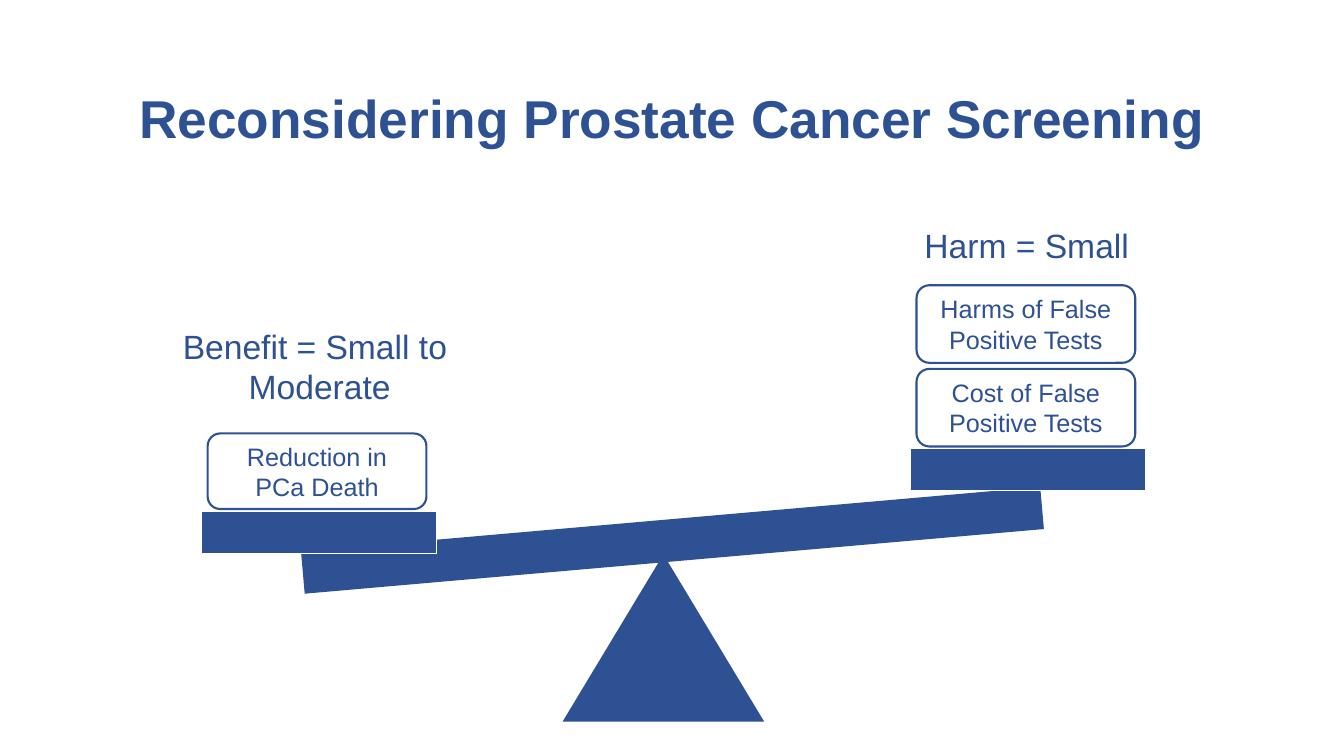
from collections import namedtuple

from lxml import etree
from pptx import Presentation
from pptx import util as u
from pptx.dml.color import RGBColor
from pptx.enum import shapes, text

COLORS = {"navy": "2D5192", "white": "FFFFFF"}
FONT = "Arial"
COLUMNS, ROWS = 13.33, 7.5
COLUMN = ROW = u.Inches(1)
PAN_HEIGHT, PAN_GAP, CARD_GAP, CARD_INSET, CARD_WIDTH = 0.42, 0.02, 0.06, 0.06, 2.17

Box = namedtuple("Box", "left top width height")


def place(box):
    """Turn a box in columns and rows into slide lengths."""
    return (round(box.left * COLUMN), round(box.top * ROW),
            round(box.width * COLUMN), round(box.height * ROW))


def write(frame, content, size=18, bold=False, align=text.PP_ALIGN.CENTER, wrap=True):
    """Fill a text frame with one paragraph for each line of the content."""
    frame.word_wrap = wrap
    for index, line in enumerate(content.split("\n")):
        para = frame.paragraphs[0] if index == 0 else frame.add_paragraph()
        para.alignment = align
        span = para.add_run()
        span.text = line
        span.font.name = FONT
        span.font.size = u.Pt(size)
        span.font.bold = bold
        span.font.color.rgb = RGBColor.from_string(COLORS["navy"])


def add_label(page, box, content, **style):
    """Add a text box that grows with its text."""
    frame = page.shapes.add_textbox(*place(box)).text_frame
    write(frame, content, **style)
    frame.auto_size = text.MSO_AUTO_SIZE.SHAPE_TO_FIT_TEXT


def add_block(page, kind, box, fill=None, line=None, weight=0.75):
    """Add a flat preset shape with an optional fill and outline."""
    block = page.shapes.add_shape(kind, *place(box))
    block.shadow.inherit = False
    if fill:
        block.fill.solid()
        block.fill.fore_color.rgb = RGBColor.from_string(COLORS[fill])
    else:
        block.fill.background()
    if line:
        block.line.color.rgb = RGBColor.from_string(COLORS[line])
        block.line.width = u.Pt(weight)
    else:
        block.line.fill.background()
    return block


def add_balance(page, box):
    """Draw the tilted beam across the box and the fulcrum below its middle."""
    beam = add_block(page, shapes.MSO_SHAPE.RECTANGLE,
                     box._replace(top=box.top, height=PAN_HEIGHT), fill="navy")
    beam.rotation = -5
    base = 2
    fulcrum = Box(box.left + (box.width - base) / 2 - 0.09, box.top + 0.35,
                  base, box.height - 0.35)
    add_block(page, shapes.MSO_SHAPE.ISOSCELES_TRIANGLE, fulcrum, fill="navy")


def add_pan(page, box, cards, card_height):
    """Draw a pan and stack its cards upwards from it."""
    add_block(page, shapes.MSO_SHAPE.RECTANGLE, box, fill="navy", line="white")
    bottom = box.top - PAN_GAP
    for content in cards:
        card_box = Box(box.left + CARD_INSET, bottom - card_height, CARD_WIDTH, card_height)
        card = add_block(page, shapes.MSO_SHAPE.ROUNDED_RECTANGLE, card_box,
                         line="navy", weight=1.5)
        card.text_frame.vertical_anchor = text.MSO_ANCHOR.MIDDLE
        write(card.text_frame, content)
        bottom -= card_height + CARD_GAP


def build_slide(deck):
    """Build the slide that weighs benefit against harm."""
    page = deck.slides.add_slide(deck.slide_layouts[6])
    add_label(page, Box(0.79, 0.8, 11.75, 0.74),
              "Reconsidering Prostate Cancer Screening", size=38, bold=True)
    add_balance(page, Box(2.99, 5.15, 7.36, 2.01))
    add_pan(page, Box(2, 5.07, 2.33, PAN_HEIGHT), ["Reduction in PCa Death"], 0.75)
    add_pan(page, Box(9.03, 4.45, 2.33, PAN_HEIGHT),
            ["Cost of False Positive Tests", "Harms of False Positive Tests"], 0.77)
    add_label(page, Box(1.7, 3.18, 2.94, 0.91), "Benefit = Small to \nModerate",
              size=24, wrap=False)
    add_label(page, Box(9.07, 2.18, 2.25, 0.5), "Harm = Small",
              size=24, align=text.PP_ALIGN.LEFT, wrap=False)


def main():
    """Create and save the deck."""
    deck = Presentation()
    deck.slide_width = round(COLUMNS * COLUMN)
    deck.slide_height = round(ROWS * ROW)
    build_slide(deck)
    deck.save("out.pptx")


if __name__ == "__main__":
    main()
